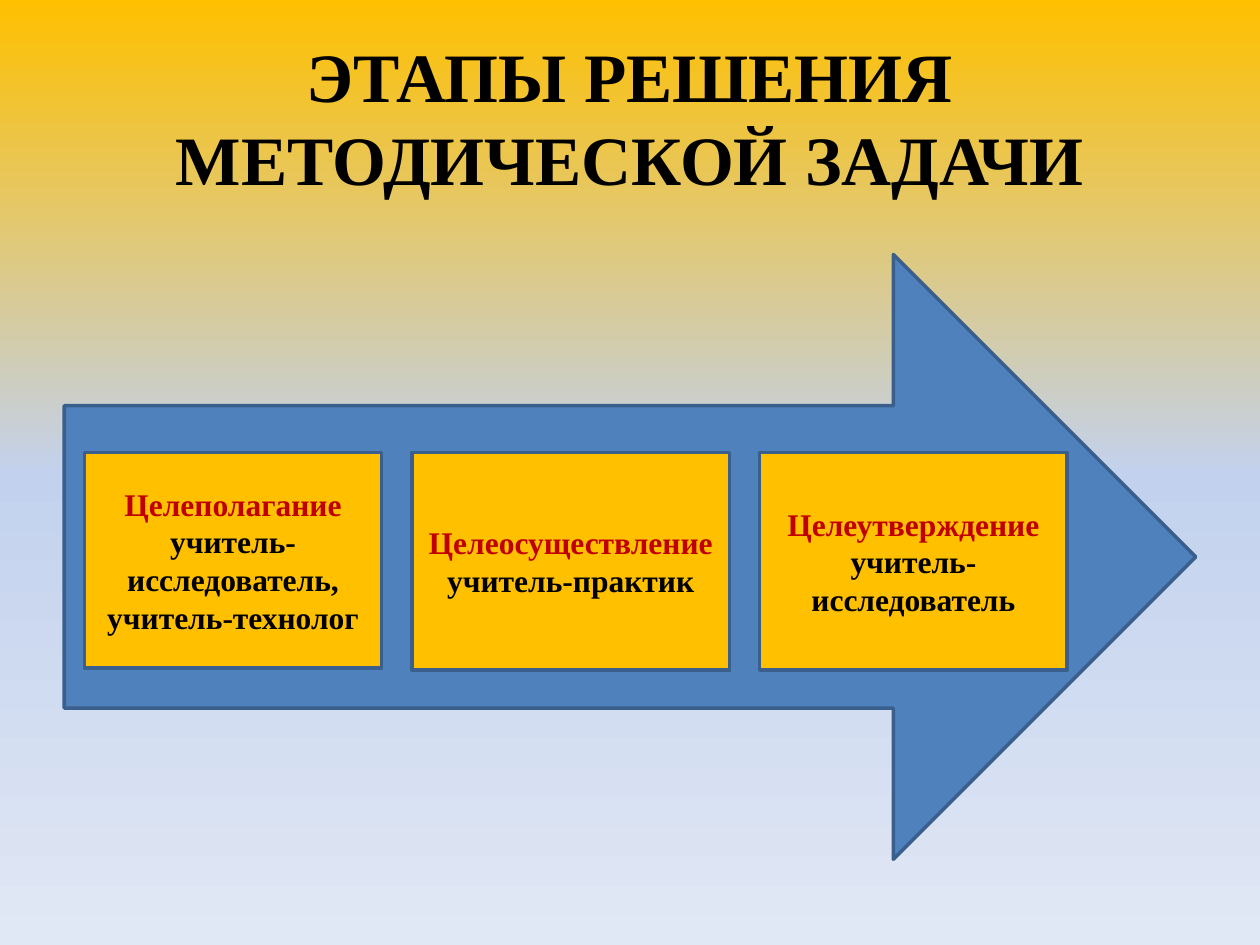
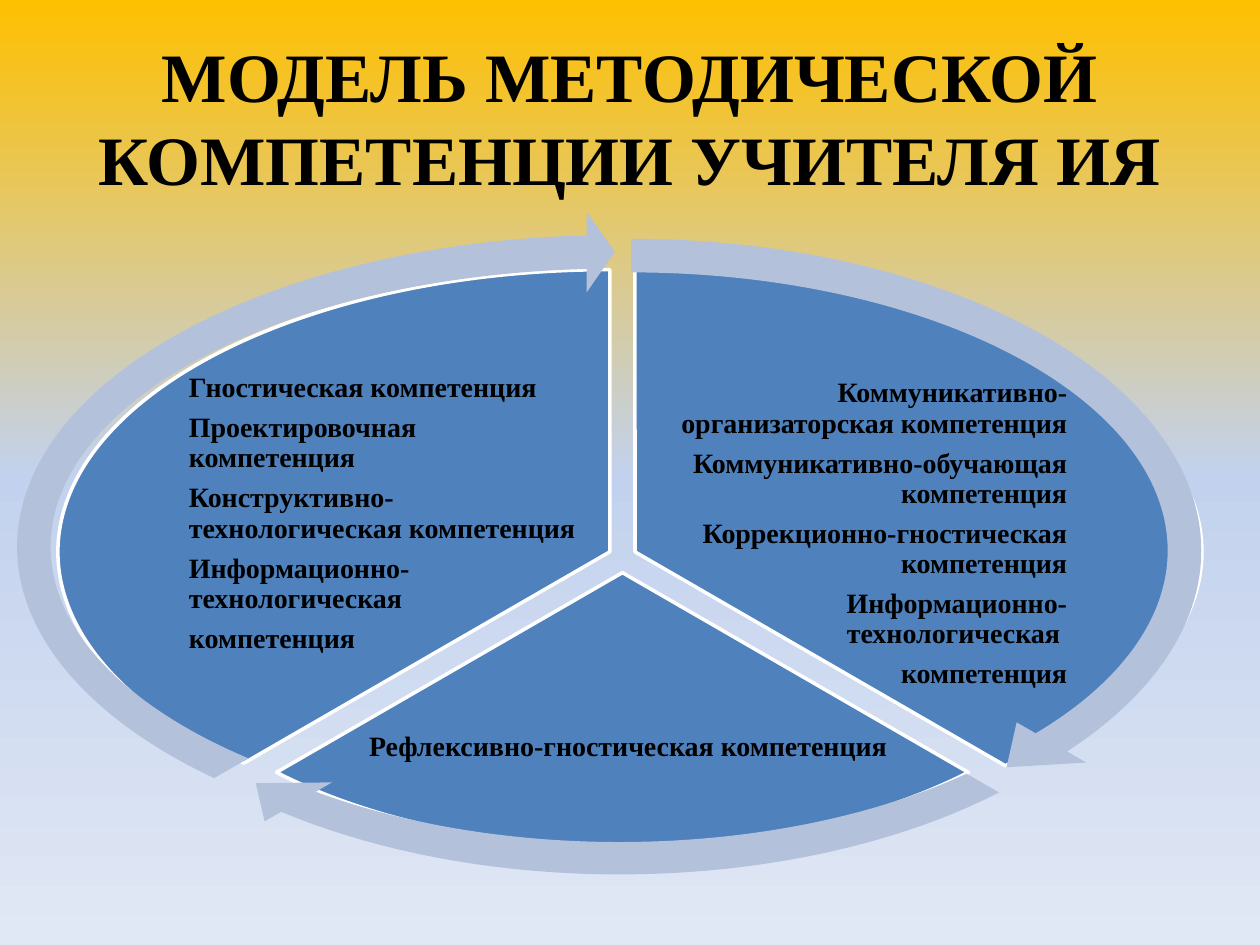
from copy import deepcopy

from pptx import Presentation
from pptx.dml.color import RGBColor
from pptx.enum.shapes import MSO_SHAPE as Shape
from pptx.enum.text import MSO_ANCHOR as Anchor, PP_ALIGN as Align
from pptx.oxml.ns import qn
from pptx.util import Inches, Pt

FONT = "Times New Roman"
BLACK, RED, WHITE = "000000", "C00000", "FFFFFF"
GOLD, BLUE, BLUE_EDGE, PALE_BLUE = "FFC000", "4F81BD", "3A5F8C", "B3C1DB"
BACKGROUND = [(0, GOLD), (0.5, "C2D1ED"), (1, "E1E8F5")]

STAGES_TITLE = "ЭТАПЫ РЕШЕНИЯ МЕТОДИЧЕСКОЙ ЗАДАЧИ"
STAGES = [  # name, teacher's role, width, height
    ("Целеполагание", "учитель-исследователь, учитель-технолог", 2.36, 1.71),
    ("Целеосуществление", "учитель-практик", 2.52, 1.73),
    ("Целеутверждение", "учитель-исследователь", 2.44, 1.73),
]
STAGE_LEFT, STAGE_TOP, STAGE_GAP = 0.67, 3.59, 0.24

MODEL_TITLE = "МОДЕЛЬ МЕТОДИЧЕСКОЙ КОМПЕТЕНЦИИ УЧИТЕЛЯ ИЯ"
SECTORS = [
    {
        "pie": (0.54, 2.14, 9, 4.48),
        "arrow": (0.3, 1.71, 9.42, 5.32),
        "label": (5.28, 3, 3.21, 2.48),
        "align": Align.RIGHT,
        "lines": [
            "Коммуникативно-организаторская компетенция",
            "Коммуникативно-обучающая компетенция",
            "Коррекционно-гностическая компетенция",
            "Информационно-технологическая ",
            "компетенция",
        ],
    },
    {
        "pie": (0.93, 2.37, 8.02, 4.35),
        "arrow": (0.34, 1.98, 9.15, 5.14),
        "label": (2.84, 5.73, 4.29, 0.4),
        "align": Align.CENTER,
        "lines": ["Рефлексивно-гностическая компетенция"],
    },
    {
        "pie": (0.46, 2.14, 8.76, 4.48),
        "arrow": (-0.05, 1.68, 9.86, 5.32),
        "label": (1.48, 2.96, 3.13, 2.24),
        "align": Align.LEFT,
        "lines": [
            "Гностическая компетенция",
            "Проектировочная компетенция",
            "Конструктивно-технологическая компетенция",
            "Информационно-технологическая",
            "компетенция",
        ],
    },
]
FIRST_ANGLE, SECTOR_SWEEP, ARROW_SWEEP = 270, 120, 114.54
ARROW_BAND, ARROW_HEAD_ANGLE, ARROW_HEAD_WIDTH = 0.05, 5.46, 0.06


def color(code):
    return RGBColor.from_string(code)


def angle(degrees):
    """Turn degrees into the unit of shape adjustments."""
    return degrees % 360 * 0.6


def add_shape(page, kind, place, fill, edge=None, adjustments=()):
    shape = page.shapes.add_shape(kind, *map(Inches, place))
    shape.shadow.inherit = False
    shape.fill.solid()
    shape.fill.fore_color.rgb = color(fill)
    if edge:
        shape.line.color.rgb = color(edge)
        shape.line.width = Pt(2)
    else:
        shape.line.fill.background()
    for index, value in enumerate(adjustments):
        shape.adjustments[index] = value
    return shape


def write(box, lines, size, align=Align.CENTER, spacing=1, gap=0):
    """Fill a box with (text, colour) paragraphs, centred vertically."""
    frame = box.text_frame
    frame.word_wrap = True
    frame.vertical_anchor = Anchor.MIDDLE
    for index, (text, code) in enumerate(lines):
        para = frame.add_paragraph() if index else frame.paragraphs[0]
        para.alignment = align
        para.line_spacing = spacing
        para.space_before = Pt(gap if index else 0)
        span = para.add_run()
        span.text = text
        span.font.name = FONT
        span.font.size = Pt(size)
        span.font.bold = True
        span.font.color.rgb = color(code)


def add_text_box(page, place):
    return page.shapes.add_textbox(*map(Inches, place))


def add_page(deck, title):
    """Add a slide with the shared gradient and title."""
    page = deck.slides.add_slide(deck.slide_layouts[6])
    fill = page.background.fill
    fill.gradient()
    fill.gradient_angle = 270
    stops = page.element.find(".//" + qn("a:gsLst"))
    stops.append(deepcopy(stops[0]))
    for stop, (position, code) in zip(fill.gradient_stops, BACKGROUND):
        stop.position = position
        stop.color.rgb = color(code)
    write(add_text_box(page, (0.5, 0.3, 9, 1.25)), [(title, BLACK)], 39.6)
    return page


def build_stages(deck):
    page = add_page(deck, STAGES_TITLE)
    add_shape(page, Shape.RIGHT_ARROW, (0.51, 2.02, 8.98, 4.8), BLUE, BLUE_EDGE)
    left = STAGE_LEFT
    for name, role, width, height in STAGES:
        place = (left, STAGE_TOP, width, height)
        box = add_shape(page, Shape.RECTANGLE, place, GOLD, BLUE_EDGE)
        write(box, [(name, RED), (role, BLACK)], 18)
        left += width + STAGE_GAP


def build_model(deck):
    page = add_page(deck, MODEL_TITLE)
    starts = [FIRST_ANGLE + SECTOR_SWEEP * index for index in range(len(SECTORS))]
    for start, sector in zip(starts, SECTORS):
        add_shape(page, Shape.PIE, sector["pie"], BLUE, WHITE,
                  (angle(start), angle(start + SECTOR_SWEEP)))
        label = add_text_box(page, sector["label"])
        frame = label.text_frame
        frame.margin_left = frame.margin_right = Inches(0.02)
        frame.margin_top = frame.margin_bottom = Inches(0.02)
        lines = [(line, BLACK) for line in sector["lines"]]
        write(label, lines, 16, sector["align"], spacing=0.9, gap=5.6)
    for start, sector in zip(starts, SECTORS):
        add_shape(page, Shape.CIRCULAR_ARROW, sector["arrow"], PALE_BLUE,
                  adjustments=(ARROW_BAND, angle(ARROW_HEAD_ANGLE),
                               angle(start + ARROW_SWEEP), angle(start),
                               ARROW_HEAD_WIDTH))


def main():
    deck = Presentation()
    deck.slide_width, deck.slide_height = Inches(10), Inches(7.5)
    build_stages(deck)
    build_model(deck)
    deck.save("out.pptx")


if __name__ == "__main__":
    main()
